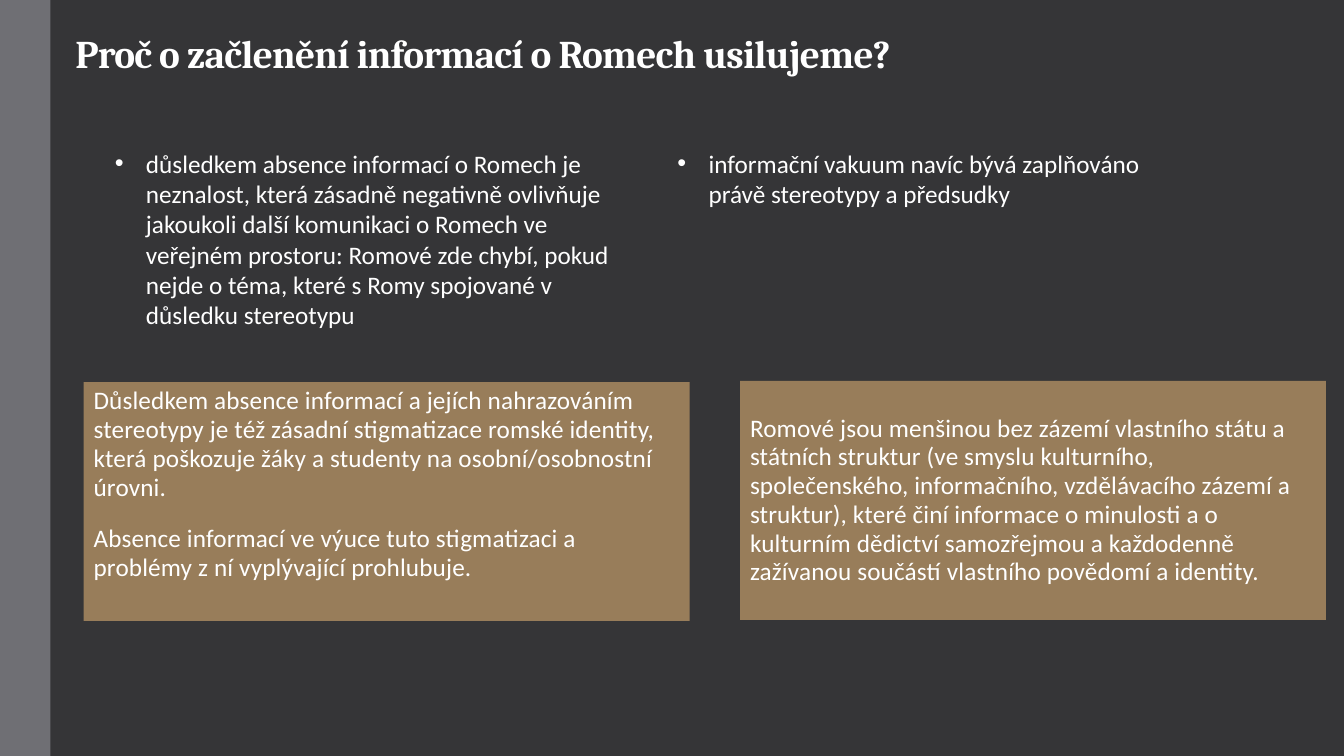
from dataclasses import dataclass

from lxml.etree import SubElement
from pptx import Presentation
from pptx.dml.color import RGBColor
from pptx.enum.shapes import MSO_SHAPE
from pptx.enum.text import MSO_ANCHOR, PP_ALIGN
from pptx.oxml.ns import qn
from pptx.util import Inches, Pt


@dataclass(frozen=True)
class Theme:
    background: RGBColor = RGBColor(0x35, 0x35, 0x37)
    sidebar: RGBColor = RGBColor(0x6F, 0x6F, 0x74)
    panel: RGBColor = RGBColor(0x98, 0x7D, 0x5A)
    text: RGBColor = RGBColor(0xFF, 0xFF, 0xFF)
    title_font: str = "Cambria"
    body_font: str = "Calibri"
    title_size: Pt = Pt(28)
    body_size: Pt = Pt(18)


theme = Theme()


def add_block(slide, left, top, width, height, fill):
    block = slide.shapes.add_shape(
        MSO_SHAPE.RECTANGLE, Inches(left), Inches(top), Inches(width), Inches(height))
    block.shadow.inherit = False
    block.fill.solid()
    block.fill.fore_color.rgb = fill
    block.line.fill.background()
    return block


def style_text(paragraph, font_name, size, tracking=0, bold=False):
    paragraph.alignment = PP_ALIGN.LEFT
    for run in paragraph.runs:
        run.font.name = font_name
        run.font.size = size
        run.font.bold = bold
        run.font.color.rgb = theme.text
        run.font.language_id = None
        run.font._element.set("spc", str(tracking))


presentation = Presentation()
presentation.slide_width = Inches(13.33)
presentation.slide_height = Inches(7.5)
slide = presentation.slides.add_slide(presentation.slide_layouts[6])
slide.background.fill.solid()
slide.background.fill.fore_color.rgb = theme.background

add_block(slide, 0, 0, 0.5, 7.5, theme.sidebar)

title = slide.shapes.add_textbox(Inches(0.65), Inches(0.25), Inches(12.23), Inches(0.56)).text_frame
title.word_wrap = True
title.vertical_anchor = MSO_ANCHOR.BOTTOM
title.text = "Proč o začlenění informací o Romech usilujeme?"
title.paragraphs[0].line_spacing = 0.85
style_text(title.paragraphs[0], theme.title_font, theme.title_size, -50, True)

panels = [
    (0.83, 3.79, 6.01, 0.05, [
        "Důsledkem absence informací a jejích nahrazováním stereotypy je též zásadní "
        "stigmatizace romské identity, která poškozuje žáky a studenty na "
        "osobní/osobnostní úrovni.",
        "Absence informací ve výuce tuto stigmatizaci a problémy z ní vyplývající prohlubuje.",
    ]),
    (7.34, 3.78, 5.81, 0.33, [
        "Romové jsou menšinou bez zázemí vlastního státu a státních struktur (ve smyslu "
        "kulturního, společenského, informačního, vzdělávacího zázemí a struktur), které "
        "činí informace o minulosti a o kulturním dědictví samozřejmou a každodenně "
        "zažívanou součástí vlastního povědomí a identity.",
    ]),
]
for left, top, width, inset, statements in panels:
    panel = add_block(slide, left, top, width, 2.37, theme.panel).text_frame
    panel.word_wrap = True
    panel.vertical_anchor = MSO_ANCHOR.TOP
    panel.margin_top = Inches(inset)
    panel.text = "\n".join(statements)
    for statement in panel.paragraphs:
        statement.line_spacing = 0.95
        statement.space_before = Pt(14)
        statement.space_after = Pt(2)
        style_text(statement, theme.body_font, theme.body_size, 10)

reasons = [
    (1.04, 5.17, 1.92,
     "důsledkem absence informací o Romech je neznalost, která zásadně negativně "
     "ovlivňuje jakoukoli další komunikaci o Romech ve veřejném prostoru: Romové zde "
     "chybí, pokud nejde o téma, které s Romy spojované v důsledku stereotypu"),
    (6.62, 5.33, 0.71,
     "informační vakuum navíc bývá zaplňováno právě stereotypy a předsudky"),
]
for left, width, height, wording in reasons:
    reason = slide.shapes.add_textbox(
        Inches(left), Inches(1.42), Inches(width), Inches(height)).text_frame
    reason.word_wrap = True
    reason.text = wording
    style_text(reason.paragraphs[0], theme.body_font, theme.body_size)
    properties = reason.paragraphs[0]._p.get_or_add_pPr()
    properties.set("marL", str(Inches(0.31)))
    properties.set("indent", str(Inches(-0.31)))
    SubElement(properties, qn("a:buFont")).set("typeface", "Arial")
    SubElement(properties, qn("a:buChar")).set("char", "•")

presentation.save("out.pptx")
